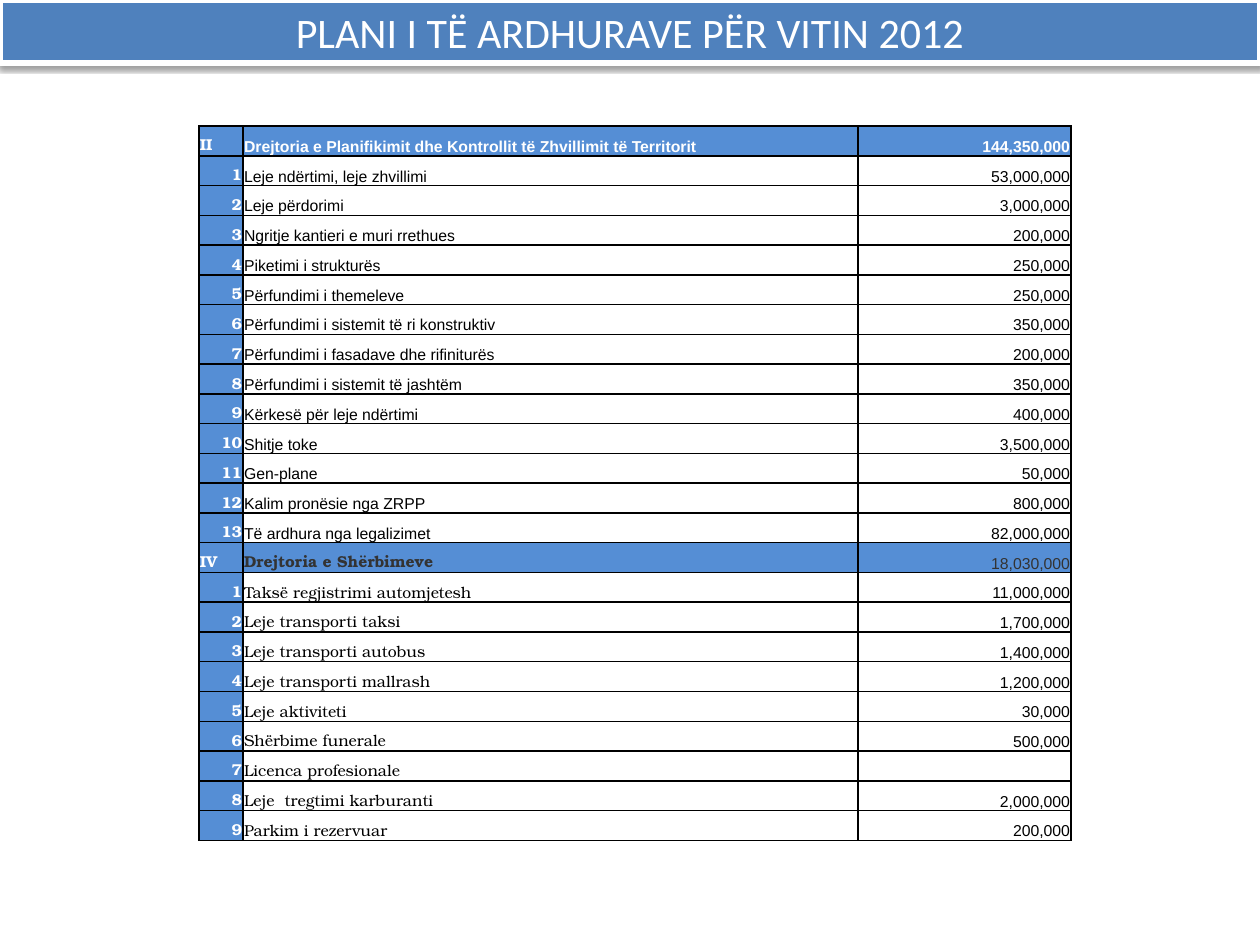
from lxml import etree
from pptx import Presentation
from pptx import util as u
from pptx.dml import color
from pptx.enum import shapes, text
from pptx.oxml import ns

SERIF, SANS = "TeX Gyre Bonum", "Arial"
BLUE, WHITE, BLACK, GREY = "558ED5", "FFFFFF", "000000", "333333"

PLANS = [
    {
        "head": ("II", "Drejtoria e Planifikimit dhe Kontrollit të Zhvillimit të Territorit", "144,350,000"),
        "font": SANS, "ink": WHITE, "bold": True, "fill": WHITE,
        "rows": [
            ("Leje ndërtimi, leje zhvillimi", "53,000,000"),
            ("Leje përdorimi", "3,000,000"),
            ("Ngritje kantieri e muri rrethues", "200,000"),
            ("Piketimi i strukturës", "250,000"),
            ("Përfundimi i themeleve", "250,000"),
            ("Përfundimi i sistemit të ri konstruktiv", "350,000"),
            ("Përfundimi i fasadave dhe rifiniturës", "200,000"),
            ("Përfundimi i sistemit të jashtëm", "350,000"),
            ("Kërkesë për leje ndërtimi", "400,000"),
            ("Shitje toke", "3,500,000"),
            ("Gen-plane", "50,000"),
            ("Kalim pronësie nga ZRPP", "800,000"),
            ("Të ardhura nga legalizimet", "82,000,000"),
        ],
    },
    {
        "head": ("IV", "Drejtoria e Shërbimeve", "18,030,000"),
        "font": SERIF, "ink": GREY, "bold": False, "fill": None,
        "rows": [
            ("Taksë regjistrimi automjetesh", "11,000,000"),
            ("Leje transporti taksi", "1,700,000"),
            ("Leje transporti autobus", "1,400,000"),
            ("Leje transporti mallrash", "1,200,000"),
            ("Leje aktiviteti", "30,000"),
            ("Shërbime funerale", "500,000"),
            ("Licenca profesionale", ""),
            ("Leje  tregtimi karburanti", "2,000,000"),
            ("Parkim i rezervuar", "200,000"),
        ],
    },
]


def rgb(code):
    """Turn a hex string into a colour."""
    return color.RGBColor.from_string(code)


def assign(item, vals):
    """Set each attribute named in a dict."""
    for key, val in vals.items():
        setattr(item, key, val)


def node(base, tag, **vals):
    """Append a drawing element with attributes."""
    return etree.SubElement(base, ns.qn("a:" + tag), vals)


def write(para, words, font, size, ink, bold, align):
    """Write one formatted run into a paragraph."""
    para.alignment = align
    if not words:
        para._p.get_or_add_endParaRPr().set("sz", str(size * 100))
        return
    run = para.add_run()
    run.text = words
    assign(run.font, {"name": font, "size": u.Pt(size), "bold": bold})
    run.font.color.rgb = rgb(ink)


def paint(cell, fill):
    """Frame a cell in black and fill it."""
    prop = cell._tc.get_or_add_tcPr()
    for side in ("lnL", "lnR", "lnT", "lnB"):
        line = node(prop, side, w=str(u.Pt(1)))
        node(node(line, "solidFill"), "srgbClr", val=BLACK)
    if fill:
        cell.fill.solid()
        cell.fill.fore_color.rgb = rgb(fill)
    else:
        cell.fill.background()


def rows():
    """Yield three cell formats for each table row."""
    left, right = text.PP_ALIGN.LEFT, text.PP_ALIGN.RIGHT
    for plan in PLANS:
        mark, name, sum_ = plan["head"]
        font, ink, bold = plan["font"], plan["ink"], plan["bold"]
        yield [
            (mark, SERIF, WHITE, True, left, BLUE),
            (name, font, ink, True, left, BLUE),
            (sum_, SANS, ink, bold, right, BLUE),
        ]
        for num, (name, sum_) in enumerate(plan["rows"], 1):
            yield [
                (str(num), SERIF, WHITE, True, right, BLUE),
                (name, font, BLACK, False, left, plan["fill"]),
                (sum_, SANS, BLACK, False, right, None),
            ]


def grid(slide, x, y, w, h):
    """Place the income table in a box."""
    data = list(rows())
    table = slide.shapes.add_table(len(data), 3, x, y, w, h).table
    assign(table, {"first_row": False, "horz_banding": False})
    first, last = u.Cm(0.89), u.Cm(4.29)
    for col, wide in zip(table.columns, (first, w - first - last, last)):
        col.width = wide
    pad = u.Cm(0.02)
    form = {
        "margin_left": pad, "margin_right": pad, "margin_top": pad,
        "margin_bottom": 0, "vertical_anchor": text.MSO_ANCHOR.BOTTOM,
    }
    for row, line in zip(table.rows, data):
        row.height = h // len(data)
        for cell, (words, font, ink, bold, align, fill) in zip(row.cells, line):
            assign(cell, form)
            write(cell.text_frame.paragraphs[0], words, font, 9, ink, bold, align)
            paint(cell, fill)


def banner(slide, x, y, w, h):
    """Place the title bar with its shadow in a box."""
    bar = slide.shapes.add_shape(shapes.MSO_SHAPE.RECTANGLE, x, y, w, h)
    bar.shadow.inherit = False
    bar.fill.solid()
    bar.fill.fore_color.rgb = rgb("4F81BD")
    bar.line.color.rgb = rgb(WHITE)
    bar.line.width = u.Pt(3)
    glow = node(
        bar._element.spPr.find(ns.qn("a:effectLst")), "outerShdw",
        blurRad=str(u.Pt(3.1)), dist=str(u.Pt(1.6)), dir="5400000", rotWithShape="0",
    )
    node(node(glow, "srgbClr", val=BLACK), "alpha", val="38000")
    frame = bar.text_frame
    assign(frame, {"word_wrap": True, "vertical_anchor": text.MSO_ANCHOR.MIDDLE})
    write(frame.paragraphs[0], "PLANI I TË ARDHURAVE PËR VITIN 2012",
          "Calibri", 24, WHITE, False, text.PP_ALIGN.CENTER)


def main():
    """Build and save the slide."""
    deck = Presentation()
    assign(deck, {"slide_width": u.Cm(25.4), "slide_height": u.Cm(19.05)})
    slide = deck.slides.add_slide(deck.slide_layouts[6])
    grid(slide, u.Cm(4.01), u.Cm(2.54), u.Cm(17.58), u.Cm(14.4))
    banner(slide, 0, 0, deck.slide_width, u.Cm(1.27))
    deck.save("out.pptx")


if __name__ == "__main__":
    main()
